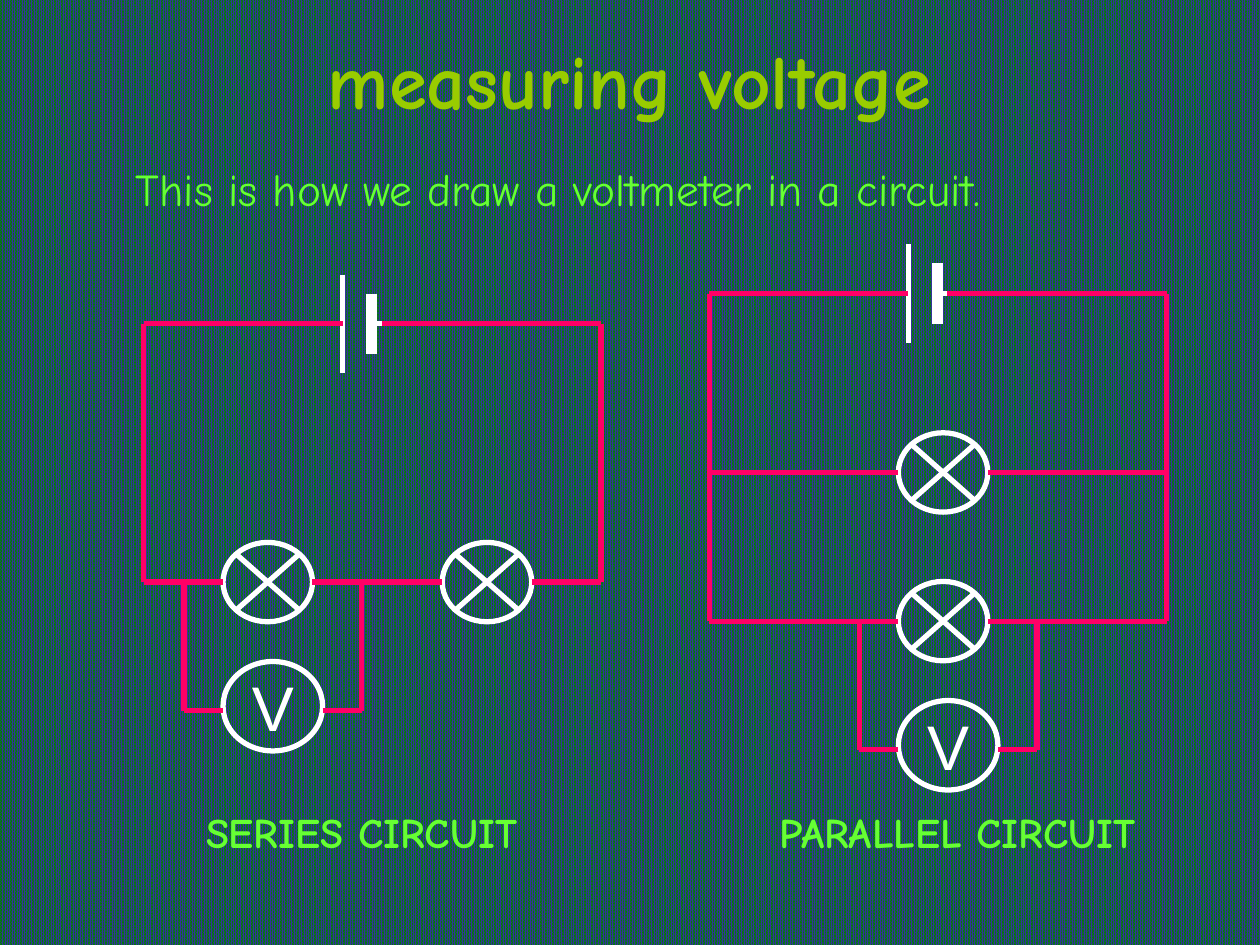
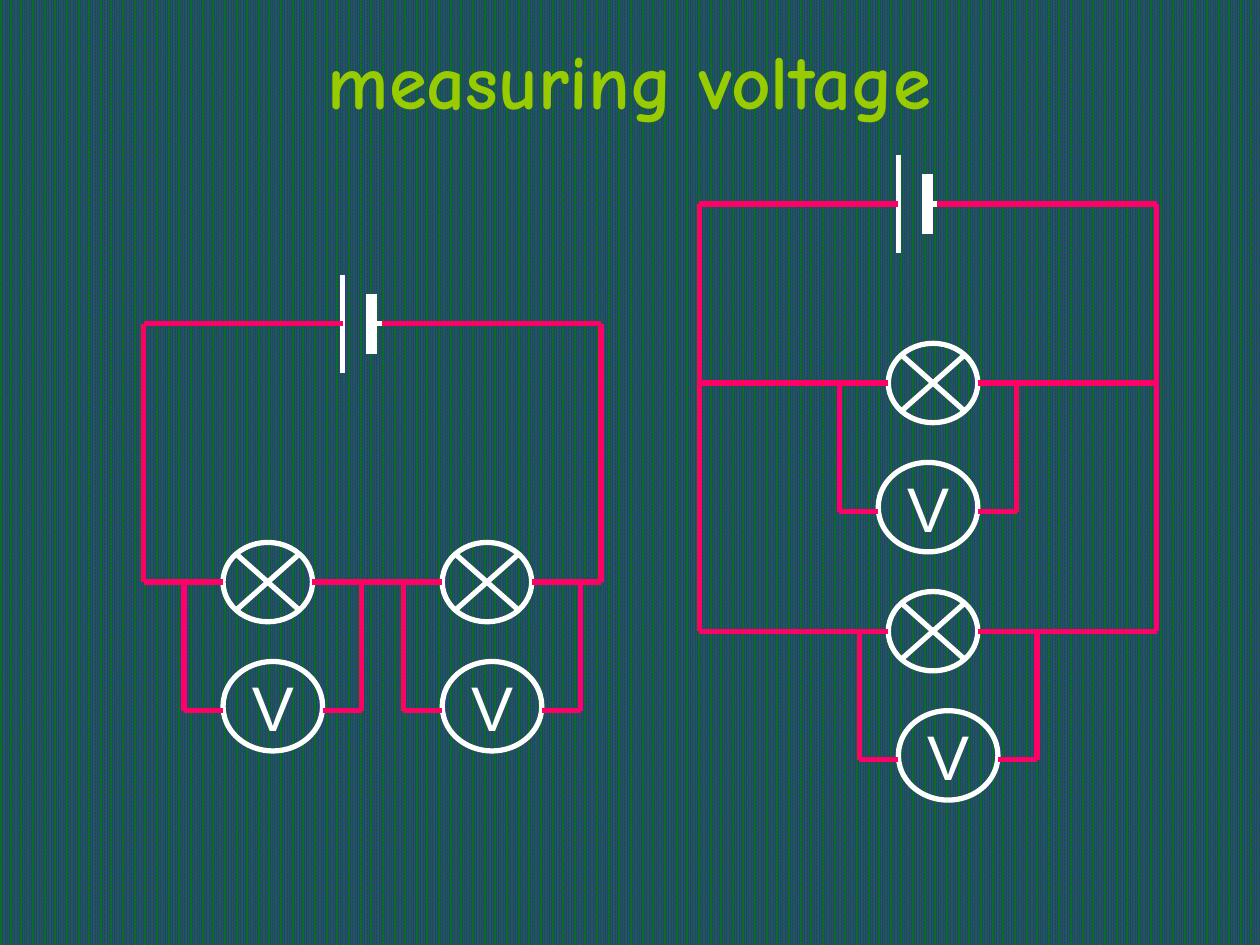
"""Build two slides that show voltmeters in series and parallel circuits."""
from itertools import chain
from lxml.etree import SubElement
from pptx import Presentation
from pptx.dml.color import RGBColor
from pptx.enum.dml import MSO_PATTERN
from pptx.enum.shapes import MSO_CONNECTOR, MSO_SHAPE
from pptx.enum.text import MSO_ANCHOR, MSO_AUTO_SIZE, PP_ALIGN
from pptx.oxml.ns import qn
from pptx.util import Inches, Pt

WIDTH, HEIGHT = 10, 7.5
COLOURS = {"stripe": "333399", "ground": "008000", "wire": "FF0066",
           "symbol": "FFFFFF", "title": "99CC00", "body": "66FF33"}
STYLES = {
    "title": {"size": 44, "name": "Comic Neue", "bold": True, "colour": "title"},
    "body": {"size": 26, "name": "Comic Neue", "bold": False, "colour": "body"},
    "caption": {"size": 24, "name": "Comic Neue", "bold": True, "colour": "body"},
    "meter": {"size": 36, "name": "Arial", "bold": False, "colour": "symbol"},
}
TITLE = ("measuring voltage", "title", (0, 0.21, WIDTH, 0.83), PP_ALIGN.CENTER)
LOOP_WIDTH = 3.63
LAMP_SIZE = (0.71, 0.63)
METER_SIZE = (0.79, 0.71)
METER_DROP, METER_LEAD_DROP, METER_ARM = 0.63, 1.02, 0.31
LONG_PLATE, SHORT_PLATE, BATTERY_END = 1.58, 1.81, 1.89
BATTERY_LEAD = 0.4

SLIDES = [
    {"texts": [
        ("This is how we draw a voltmeter in a circuit.", "body",
         (0.98, 1.23, 8.11, 0.53), PP_ALIGN.LEFT),
        ("SERIES CIRCUIT", "caption", (0.98, 6.35, 3.78, 0.5), PP_ALIGN.CENTER),
        ("PARALLEL CIRCUIT", "caption", (5.71, 6.35, 3.78, 0.5), PP_ALIGN.CENTER)],
     "circuits": [
        {"corner": (1.14, 2.57),
         "rows": [{"drop": 2.05, "lamps": [0.63, 2.37], "meters": [0.63]}]},
        {"corner": (5.63, 2.33),
         "rows": [{"drop": 1.42, "lamps": [1.5], "meters": []},
                  {"drop": 2.6, "lamps": [1.5], "meters": [1.5]}]}]},
    {"texts": [],
     "circuits": [
        {"corner": (1.14, 2.57),
         "rows": [{"drop": 2.05, "lamps": [0.63, 2.37], "meters": [0.63, 2.37]}]},
        {"corner": (5.55, 1.62),
         "rows": [{"drop": 1.42, "lamps": [1.5], "meters": [1.42]},
                  {"drop": 3.39, "lamps": [1.5], "meters": [1.58]}]}]},
]


def colour(name):
    return RGBColor.from_string(COLOURS[name])


def write(frame, text, style, alignment):
    paragraph = frame.paragraphs[0]
    paragraph.alignment = alignment
    run = paragraph.add_run()
    run.text = text
    values = STYLES[style]
    for key, value in {"size": Pt(values["size"]), "name": values["name"],
                       "bold": values["bold"]}.items():
        setattr(run.font, key, value)
    run.font.color.rgb = colour(values["colour"])


def add_text(slide, text, style, box, alignment):
    frame = slide.shapes.add_textbox(*map(Inches, box)).text_frame
    frame.word_wrap = True
    frame.auto_size = MSO_AUTO_SIZE.SHAPE_TO_FIT_TEXT
    write(frame, text, style, alignment)


def add_line(slide, start, end, line_colour="wire", weight=3):
    connector = slide.shapes.add_connector(
        MSO_CONNECTOR.STRAIGHT, *map(Inches, (*start, *end)))
    connector.line.color.rgb = colour(line_colour)
    connector.line.width = Pt(weight)
    SubElement(connector._element.spPr, qn("a:effectLst"))


def add_symbol(slide, kind, left, top, size):
    shape = slide.shapes.add_shape(kind, *map(Inches, (left, top, *size)))
    shape.shadow.inherit = False
    shape.fill.background()
    shape.line.color.rgb = colour("symbol")
    shape.line.width = Pt(3)
    return shape


def add_battery(slide, left, middle):
    for offset, half, weight in [(LONG_PLATE, 0.39, 3), (SHORT_PLATE, 0.24, 6)]:
        x = left + offset
        add_line(slide, (x, middle - half), (x, middle + half), "symbol", weight)
    for start in (SHORT_PLATE, LONG_PLATE - BATTERY_LEAD):
        add_line(slide, (left + start, middle),
                 (left + start + BATTERY_LEAD, middle), "symbol")


def add_row(slide, left, middle, gaps):
    """Draw a wire across the loop that leaves out each (start, end) gap."""
    stops = [0, *chain.from_iterable(gaps), LOOP_WIDTH]
    for start, end in zip(stops[::2], stops[1::2]):
        add_line(slide, (left + start, middle), (left + end, middle))


def add_meter(slide, left, wire):
    shape = add_symbol(slide, MSO_SHAPE.OVAL, left, wire + METER_DROP, METER_SIZE)
    frame = shape.text_frame
    frame.word_wrap = False
    frame.vertical_anchor = MSO_ANCHOR.MIDDLE
    write(frame, "V", "meter", PP_ALIGN.CENTER)
    lead = wire + METER_LEAD_DROP
    for side, arm in [(left, -METER_ARM), (left + METER_SIZE[0], METER_ARM)]:
        add_line(slide, (side, lead), (side + arm, lead))
        add_line(slide, (side + arm, lead), (side + arm, wire))


def add_circuit(slide, corner, rows):
    left, top = corner
    lamp_width, lamp_height = LAMP_SIZE
    add_battery(slide, left, top)
    add_row(slide, left, top, [(LONG_PLATE, BATTERY_END)])
    for x in (left, left + LOOP_WIDTH):
        add_line(slide, (x, top), (x, top + rows[-1]["drop"]))
    for row in rows:
        wire = top + row["drop"]
        for lamp in row["lamps"]:
            add_symbol(slide, MSO_SHAPE.FLOWCHART_SUMMING_JUNCTION,
                       left + lamp, wire - lamp_height / 2, LAMP_SIZE)
        add_row(slide, left, wire, [(lamp, lamp + lamp_width) for lamp in row["lamps"]])
        for meter in row["meters"]:
            add_meter(slide, left + meter, wire)


def add_background(slide):
    fill = slide.background.fill
    fill.patterned()
    fill.pattern = MSO_PATTERN.PERCENT_90
    fill.fore_color.rgb = colour("stripe")
    fill.back_color.rgb = colour("ground")


def main():
    presentation = Presentation()
    presentation.slide_width, presentation.slide_height = Inches(WIDTH), Inches(HEIGHT)
    for content in SLIDES:
        slide = presentation.slides.add_slide(presentation.slide_layouts[6])
        add_background(slide)
        for text in [TITLE, *content["texts"]]:
            add_text(slide, *text)
        for circuit in content["circuits"]:
            add_circuit(slide, **circuit)
    presentation.save("out.pptx")


if __name__ == "__main__":
    main()
